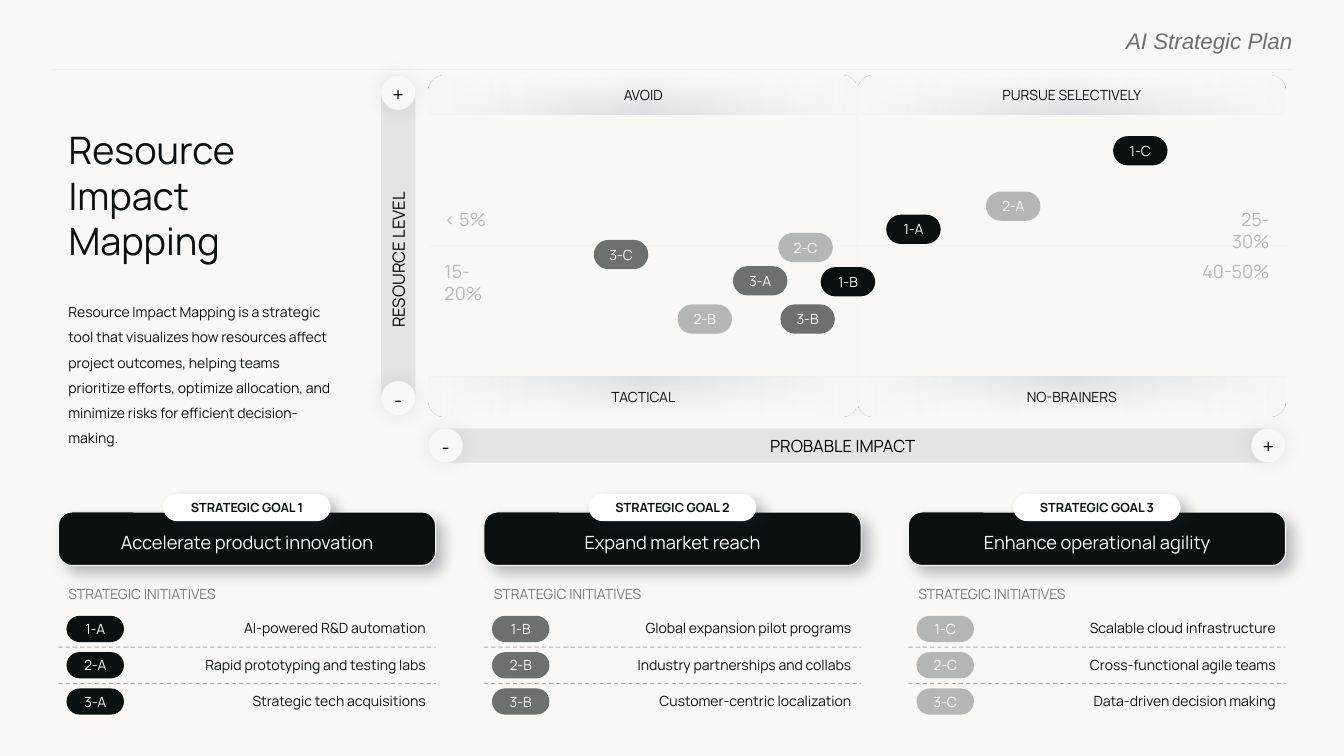
from dataclasses import dataclass
from typing import NamedTuple, Optional

from lxml import etree
from pptx import Presentation
from pptx.dml.color import RGBColor
from pptx.enum.dml import MSO_LINE
from pptx.enum.shapes import MSO_CONNECTOR, MSO_SHAPE
from pptx.enum.text import MSO_ANCHOR, MSO_AUTO_SIZE, PP_ALIGN
from pptx.oxml.ns import qn
from pptx.util import Inches, Pt

ROUND, TOP_ROUND, OVAL = MSO_SHAPE.ROUNDED_RECTANGLE, MSO_SHAPE.ROUND_2_SAME_RECTANGLE, MSO_SHAPE.OVAL
STRAIGHT, DASH = MSO_CONNECTOR.STRAIGHT, MSO_LINE.DASH
TOP, MIDDLE, BOTTOM = MSO_ANCHOR.TOP, MSO_ANCHOR.MIDDLE, MSO_ANCHOR.BOTTOM
LEFT, CENTER, RIGHT = PP_ALIGN.LEFT, PP_ALIGN.CENTER, PP_ALIGN.RIGHT
NO_AUTOFIT = MSO_AUTO_SIZE.NONE

INK = RGBColor(0x09, 0x10, 0x0F)
BLACK = RGBColor(0x00, 0x00, 0x00)
WHITE = RGBColor(0xFF, 0xFF, 0xFF)
PAPER = RGBColor(0xF9, 0xF8, 0xF5)
DARK_GREY = RGBColor(0x6C, 0x70, 0x6F)
LIGHT_GREY = RGBColor(0xB5, 0xB7, 0xB7)
MID_GREY = RGBColor(0x7B, 0x7B, 0x7B)
AXIS_GREY = RGBColor(0xB9, 0xB9, 0xB9)
RULE = RGBColor(0xEF, 0xEF, 0xEF)
GRID = RGBColor(0xF7, 0xF4, 0xF1)
NAVY = RGBColor(0x32, 0x49, 0x73)

Box = tuple[float, float, float, float]


class Shadow(NamedTuple):
    color: str
    opacity: int
    blur: float
    distance: float
    angle: int


class Stop(NamedTuple):
    position: int
    color: RGBColor
    opacity: int


class Marker(NamedTuple):
    code: str
    left: float
    top: float
    fill: RGBColor


class Goal(NamedTuple):
    left: float
    title: str
    fill: RGBColor
    initiatives: tuple[str, str, str]


@dataclass(frozen=True)
class Style:
    size: float = 10
    color: RGBColor = INK
    align: PP_ALIGN = LEFT
    anchor: MSO_ANCHOR = TOP
    insets: Box = (0.1, 0.05, 0.1, 0.05)
    font: str = "Manrope"
    bold: bool = False
    italic: bool = False
    spacing: float = 1.0


NO_INSET = (0, 0, 0, 0)
PILL = Style(color=PAPER, align=CENTER, anchor=MIDDLE, insets=NO_INSET)
SIGN = Style(15, INK, CENTER, MIDDLE, (0, 0.05, 0, 0), "Montserrat", spacing=0.93)
QUADRANT = Style(align=CENTER, anchor=MIDDLE)
GOAL_TITLE = Style(13, WHITE, CENTER, BOTTOM, (0, 0, 0, 0.08))
GOAL_TAG = Style(9, INK, CENTER, MIDDLE, NO_INSET, bold=True)
AXIS = Style(12, BLACK)
CARD_SHADOW = Shadow("192439", 30, 10, 7, 45)
KNOB_SHADOW = Shadow("253656", 10, 13, 0, 0)

GOALS = [
    Goal(0.58, "Accelerate product innovation", INK,
         ("AI-powered R&D automation", "Rapid prototyping and testing labs", "Strategic tech acquisitions")),
    Goal(4.8, "Expand market reach", DARK_GREY,
         ("Global expansion pilot programs", "Industry partnerships and collabs", "Customer-centric localization")),
    Goal(9.01, "Enhance operational agility", LIGHT_GREY,
         ("Scalable cloud infrastructure", "Cross-functional agile teams", "Data-driven decision making")),
]
MARKERS = [
    Marker("1-A", 8.79, 2.13, INK), Marker("1-B", 8.14, 2.65, INK), Marker("1-C", 11.04, 1.35, INK),
    Marker("2-A", 9.78, 1.9, LIGHT_GREY), Marker("2-B", 6.72, 3.02, LIGHT_GREY),
    Marker("2-C", 7.72, 2.31, LIGHT_GREY), Marker("3-A", 7.27, 2.64, DARK_GREY),
    Marker("3-B", 7.74, 3.02, DARK_GREY), Marker("3-C", 5.89, 2.38, DARK_GREY),
]
SHARES = [("< 5%", 4.31, 2.02, 0.61, LEFT), ("15-20%", 4.31, 2.53, 0.82, LEFT),
          ("25-30%", 11.84, 2.02, 0.85, RIGHT), ("40-50%", 11.8, 2.53, 0.89, RIGHT)]
QUADRANTS = [("TACTICAL", 6.38, 3.8, 0.91), ("NO-BRAINERS", 10.63, 3.8, 1.25),
             ("PURSUE SELECTIVELY", 10.63, 0.81, 1.81), ("AVOID", 6.38, 0.81, 0.69)]
KNOBS = [("+", 3.78, 0.75), ("-", 3.78, 3.78), ("-", 4.25, 4.25), ("+", 12.41, 4.25)]
INTRO = ("Resource Impact Mapping is a strategic tool that visualizes how resources affect project outcomes, "
         "helping teams prioritize efforts, optimize allocation, and minimize risks for efficient decision-making.")


def add_color(parent, color, opacity: int):
    clr = etree.SubElement(parent, qn("a:srgbClr"), val=str(color))
    etree.SubElement(clr, qn("a:alpha"), val=str(opacity * 1000))


def set_opacity(sp, opacity: int):
    """Make the first solid colour of a shape or line see-through."""
    clr = sp._element.spPr.find(".//" + qn("a:srgbClr"))
    etree.SubElement(clr, qn("a:alpha"), val=str(opacity * 1000))


def write(sp, text: str, style: Style):
    tf = sp.text_frame
    tf.text = text
    frame = dict(word_wrap=True, auto_size=NO_AUTOFIT, vertical_anchor=style.anchor)
    sides = ("margin_left", "margin_top", "margin_right", "margin_bottom")
    frame.update(zip(sides, map(Inches, style.insets)))
    p = tf.paragraphs[0]
    font = dict(name=style.font, size=Pt(style.size), bold=style.bold, italic=style.italic)
    para = dict(alignment=style.align, line_spacing=style.spacing)
    for target, values in ((tf, frame), (p, para), (p.runs[0].font, font)):
        for name, value in values.items():
            setattr(target, name, value)
    p.runs[0].font.color.rgb = style.color


def add_text(s, text: str, box: Box, style: Style):
    sp = s.shapes.add_textbox(*map(Inches, box))
    write(sp, text, style)
    return sp


def add_box(s, preset, box: Box, fill: Optional[RGBColor] = None, adj: tuple = (),
            shadow: Optional[Shadow] = None):
    sp = s.shapes.add_shape(preset, *map(Inches, box))
    for i, value in enumerate(adj):
        sp.adjustments[i] = value
    if fill is not None:
        sp.fill.solid()
        sp.fill.fore_color.rgb = fill
    sp.line.fill.background()
    sp.shadow.inherit = False
    if shadow:
        outer = etree.SubElement(
            sp._element.spPr.find(qn("a:effectLst")), qn("a:outerShdw"),
            blurRad=str(Pt(shadow.blur)), dist=str(Pt(shadow.distance)),
            dir=str(shadow.angle * 60000), algn="ctr", rotWithShape="0")
        add_color(outer, shadow.color, shadow.opacity)
    return sp


def add_band(s, box: Box, adj: float, stops: list[Stop], angle: int, rotation: int):
    """Draw a gradient header strip with two rounded corners."""
    sp = add_box(s, TOP_ROUND, box, adj=(adj, 0))
    sp.rotation = rotation
    sp.fill.gradient()
    grad = sp._element.spPr.find(qn("a:gradFill"))
    grad.find(qn("a:lin")).set("ang", str(angle * 60000))
    gs_list = grad.find(qn("a:gsLst"))
    for gs in list(gs_list):
        gs_list.remove(gs)
    for stop in stops:
        gs = etree.SubElement(gs_list, qn("a:gs"), pos=str(stop.position * 1000))
        add_color(gs, stop.color, stop.opacity)


def add_line(s, ends: Box, color: RGBColor, width: float):
    line = s.shapes.add_connector(STRAIGHT, *map(Inches, ends))
    line.line.color.rgb = color
    line.line.width = Pt(width)
    etree.SubElement(line._element.spPr, qn("a:effectLst"))
    return line


def add_pill(s, text: str, box: Box, fill: RGBColor):
    write(add_box(s, ROUND, box, fill, (0.5,)), text, PILL)


def add_goal(s, number: int, goal: Goal):
    x = goal.left
    card = add_box(s, ROUND, (x, 5.08, 3.74, 0.53), INK, (0.253,), CARD_SHADOW)
    card.line.color.rgb = PAPER
    card.line.width = Pt(0.75)
    write(card, goal.title, GOAL_TITLE)
    tag = add_box(s, ROUND, (x + 1.04, 4.9, 1.66, 0.27), WHITE, (0.5,), CARD_SHADOW)
    write(tag, f"STRATEGIC GOAL {number}", GOAL_TAG)
    add_text(s, "STRATEGIC INITIATIVES", (x, 5.76, 2.41, 0.27), Style(color=MID_GREY))
    for row, initiative in enumerate(goal.initiatives):
        y = 6.11 + 0.36 * row
        add_text(s, initiative, (x + 0.87, y - 0.01, 2.87, 0.27), Style(align=RIGHT))
        add_pill(s, f"{row + 1}-{'ABC'[number - 1]}" , (x + 0.08, y, 0.57, 0.26), goal.fill) if number > 1 else \
            add_pill(s, f"{row + 1}-A", (x + 0.08, y, 0.57, 0.26), goal.fill)
        if row < 2:
            line = add_line(s, (x, y + 0.31, x + 3.74, y + 0.31), MID_GREY, 0.75)
            line.line.dash_style = DASH
            set_opacity(line, 60)


def add_matrix(s):
    add_box(s, ROUND, (4.25, 0.75, 8.5, 3.37), PAPER, (0.049,))
    tint = [Stop(0, NAVY, 0), Stop(100, NAVY, 15)]
    fade = [Stop(0, PAPER, 100), Stop(50, WHITE, 0), Stop(100, PAPER, 100)]
    for y, rotation in ((0.75, 0), (3.74, 180)):
        add_band(s, (4.25, y, 8.5, 0.39), 0.355, tint, 90, rotation)
        for x in (4.25, 8.5):
            add_band(s, (x, y, 4.25, 0.39), 0.409, fade, 0, rotation)
    for ends in ((4.25, 2.44, 12.75, 2.44), (8.5, 0.75, 8.5, 4.13)):
        add_line(s, ends, GRID, 2)
    for box in ((3.78, 0.75, 0.34, 3.37), (4.25, 4.25, 8.5, 0.34)):
        set_opacity(add_box(s, ROUND, box, AXIS_GREY, (0.5,)), 30)
    for text, x, y, width, align in SHARES:
        add_text(s, text, (x, y, width, 0.32), Style(13, AXIS_GREY, align))
    for text, center, y, width in QUADRANTS:
        add_text(s, text, (center - width / 2, y, width, 0.27), QUADRANT)
    for sign, x, y in KNOBS:
        write(add_box(s, OVAL, (x, y, 0.34, 0.34), PAPER, shadow=KNOB_SHADOW), sign, SIGN)
    add_text(s, "RESOURCE LEVEL", (3.04, 2.29, 1.82, 0.3), AXIS).rotation = 270
    add_text(s, "PROBABLE IMPACT", (7.54, 4.27, 1.93, 0.3), AXIS)
    for m in MARKERS:
        add_pill(s, m.code, (m.left, m.top, 0.54, 0.29), m.fill)


def main():
    prs = Presentation()
    prs.slide_width, prs.slide_height = Inches(13.33), Inches(7.5)
    s = prs.slides.add_slide(prs.slide_layouts[5])
    s.background.fill.solid()
    s.background.fill.fore_color.rgb = PAPER
    title = s.shapes.title
    title.left, title.top, title.width, title.height = map(Inches, (0.58, 1.21, 2.55, 1.46))
    write(title, "Resource Impact Mapping", Style(27))
    add_line(s, (12.82, 0.69, 0.52, 0.69), RULE, 0.75)
    add_text(s, "AI Strategic Plan", (6.56, 0.27, 6.26, 0.24),
             Style(16, DARK_GREY, RIGHT, insets=NO_INSET, font="Arial", italic=True))
    add_text(s, INTRO, (0.58, 2.88, 2.87, 1.53), Style(spacing=1.5))
    for number, goal in enumerate(GOALS, 1):
        add_goal(s, number, goal)
    add_matrix(s)
    prs.save("out.pptx")


if __name__ == "__main__":
    main()
